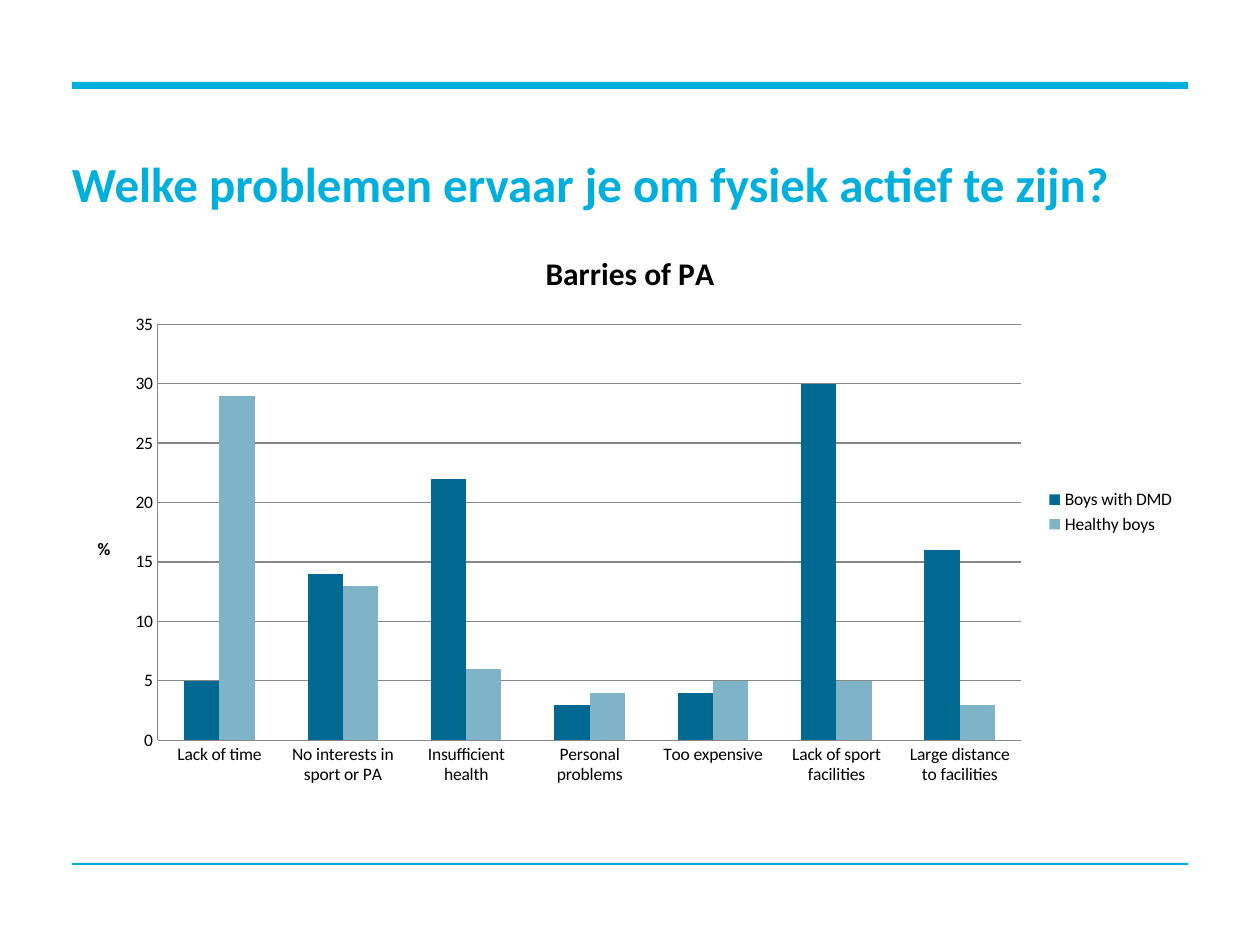
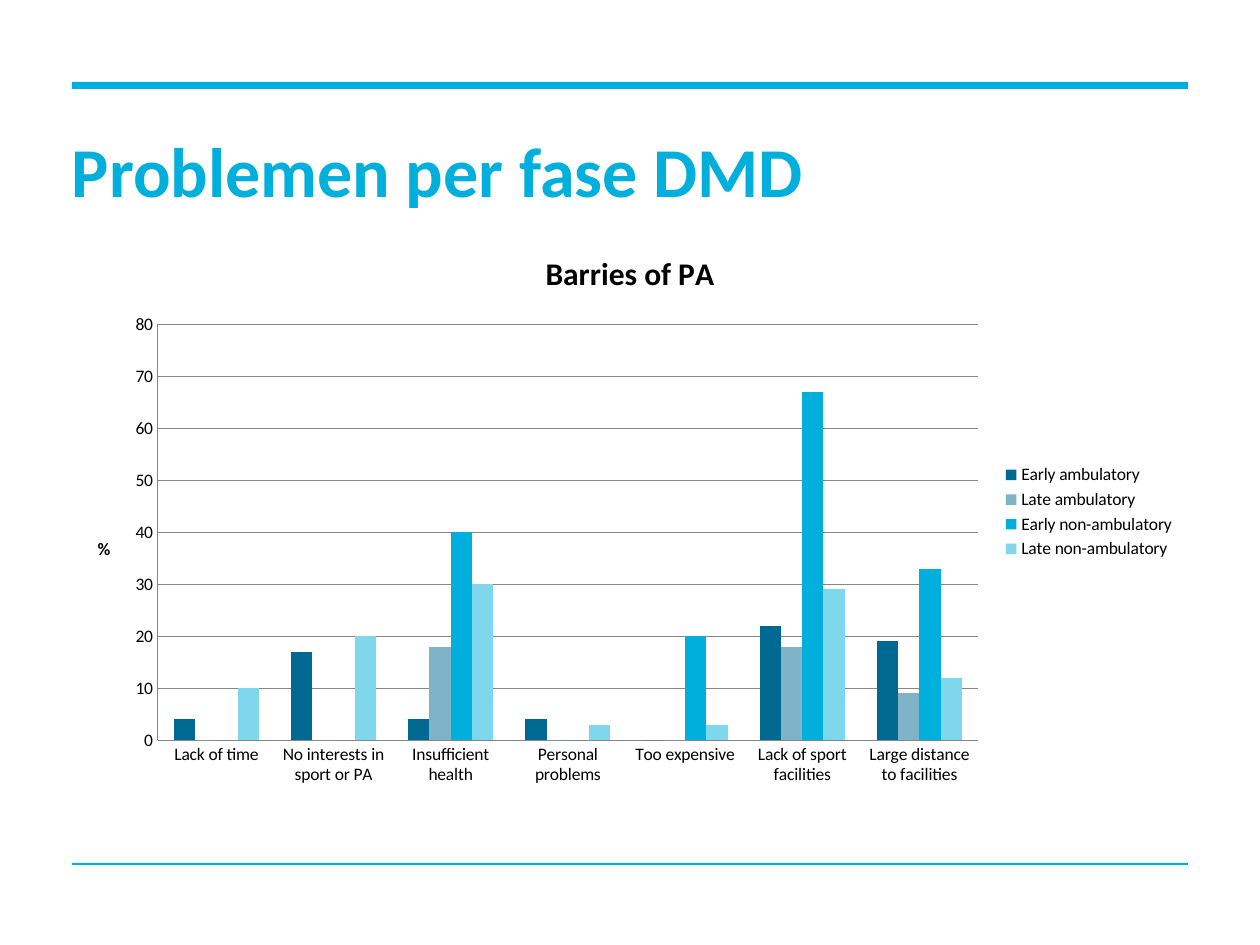
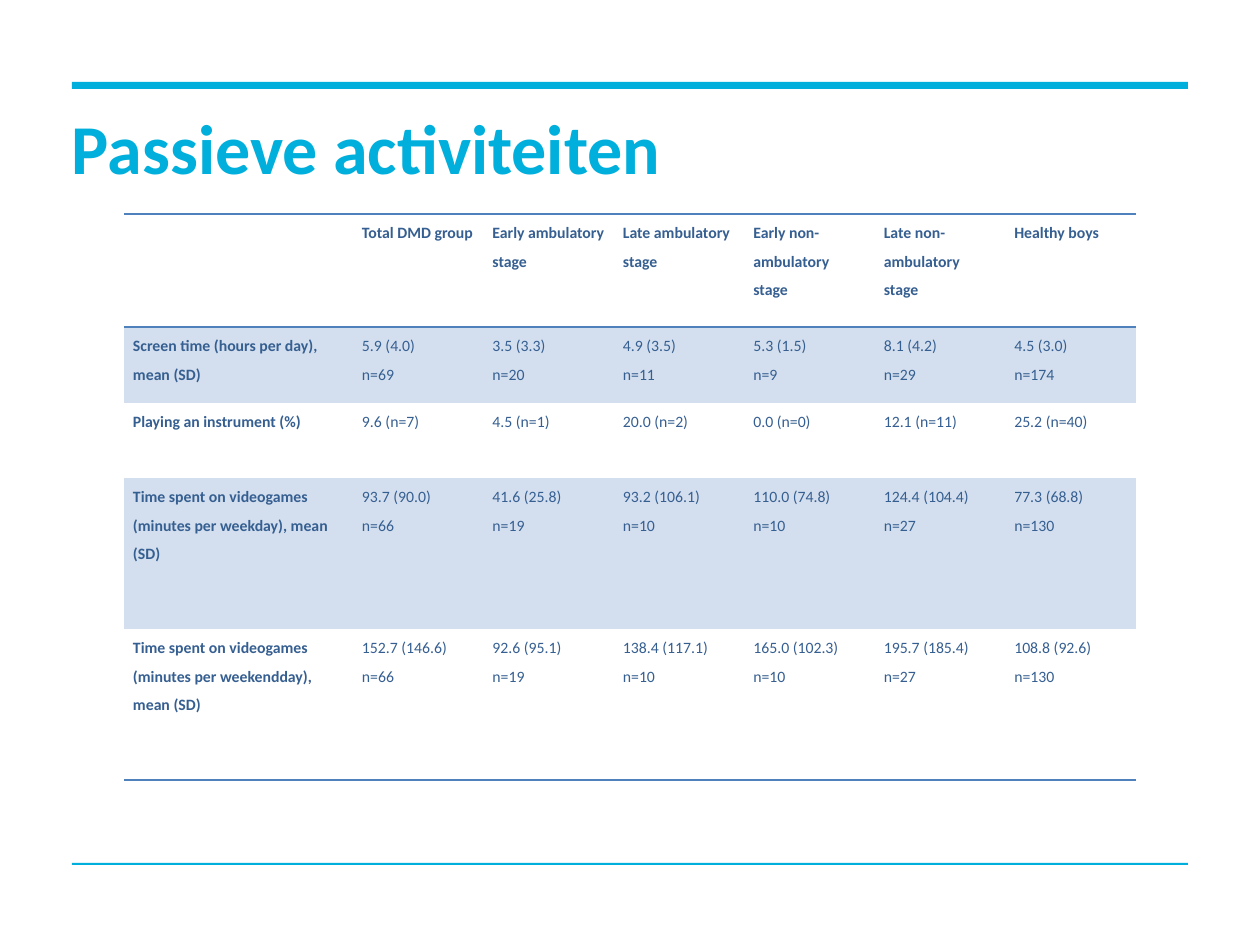
from lxml import etree
from pptx import Presentation
from pptx.chart.data import CategoryChartData
from pptx.dml.color import RGBColor
from pptx.enum.chart import XL_CHART_TYPE, XL_LEGEND_POSITION, XL_TICK_MARK
from pptx.enum.shapes import MSO_SHAPE
from pptx.enum.text import MSO_ANCHOR
from pptx.oxml.ns import qn
from pptx.util import Emu, Pt

COLUMNS = XL_CHART_TYPE.COLUMN_CLUSTERED
LEGEND_RIGHT = XL_LEGEND_POSITION.RIGHT
NO_TICK = XL_TICK_MARK.NONE
RECTANGLE = MSO_SHAPE.RECTANGLE
MIDDLE = MSO_ANCHOR.MIDDLE

FONT = "Calibri"
CYAN = "00AFDC"
BLACK = "000000"
GRID_GREY = "878787"
TABLE_TEXT = "365F91"
TABLE_RULE = "4F81BD"
TABLE_BAND = "D3DFEE"
SERIES_COLORS = ["006991", "7FB4C8", CYAN, "7FD7ED"]
NO_TABLE_STYLE = "{2D5ABB26-0587-4C30-8999-92F81FD0307C}"
LEFT, WIDTH = 72, 1116


def px(length):
    return Emu(round(length * 914400 / 126))


def rgb(value):
    return RGBColor.from_string(value)


barriers = ["Lack of time", "No interests in sport or PA", "Insufficient health",
            "Personal problems", "Too expensive", "Lack of sport facilities",
            "Large distance to facilities"]
boys_compared = {
    "Boys with DMD": [5, 14, 22, 3, 4, 30, 16],
    "Healthy boys": [29, 13, 6, 4, 5, 5, 3],
}
stages_compared = {
    "Early ambulatory": [4, 17, 4, 4, 0, 22, 19],
    "Late ambulatory": [0, 0, 18, 0, 0, 18, 9],
    "Early non-ambulatory": [0, 0, 40, 0, 20, 67, 33],
    "Late non-ambulatory": [10, 20, 30, 3, 3, 29, 12],
}
activities = [
    ["", "Total DMD group", "Early ambulatory stage", "Late ambulatory stage",
     "Early non-ambulatory stage", "Late non-ambulatory stage", "Healthy boys"],
    ["Screen time (hours per day), mean (SD)", "5.9 (4.0)\nn=69", "3.5 (3.3)\nn=20",
     "4.9 (3.5)\nn=11", "5.3 (1.5)\nn=9", "8.1 (4.2)\nn=29", "4.5 (3.0)\nn=174"],
    ["Playing an instrument (%)", "9.6 (n=7)", "4.5 (n=1)", "20.0 (n=2)",
     "0.0 (n=0)", "12.1 (n=11)", "25.2 (n=40)"],
    ["Time spent on videogames (minutes per weekday), mean (SD)",
     "93.7 (90.0)\nn=66", "41.6 (25.8)\nn=19", "93.2 (106.1)\nn=10",
     "110.0 (74.8)\nn=10", "124.4 (104.4)\nn=27", "77.3 (68.8)\nn=130"],
    ["Time spent on videogames (minutes per weekendday), mean (SD)",
     "152.7 (146.6)\nn=66", "92.6 (95.1)\nn=19", "138.4 (117.1)\nn=10",
     "165.0 (102.3)\nn=10", "195.7 (185.4)\nn=27", "108.8 (92.6)\nn=130"],
]
row_heights = [113, 76, 75, 151, 151]
ruled_edges = {0: ["a:lnT", "a:lnB"], 4: ["a:lnB"]}

pages = [
    ("Welke problemen ervaar je om fysiek actief te zijn?", 28, 139, boys_compared, 35, 5),
    ("Problemen per fase DMD", 40, 138, stages_compared, 80, 10),
    ("Passieve activiteiten", 40, 115, None, None, None),
]

prs = Presentation()
prs.slide_width, prs.slide_height = px(1260), px(945)

for heading, heading_size, heading_top, percentages, axis_max, axis_step in pages:
    slide = prs.slides.add_slide(prs.slide_layouts[6])

    for rule_top, rule_height in [(82, 7), (863, 2)]:
        rule = slide.shapes.add_shape(RECTANGLE, px(LEFT), px(rule_top), px(WIDTH), px(rule_height))
        rule.shadow.inherit = False
        rule.fill.solid()
        rule.fill.fore_color.rgb = rgb(CYAN)
        rule.line.fill.background()

    title = slide.shapes.add_textbox(px(LEFT), px(heading_top), px(WIDTH), px(73)).text_frame
    title.word_wrap = True
    title.vertical_anchor = MIDDLE
    title.margin_left = title.margin_right = title.margin_top = title.margin_bottom = 0
    title.text = heading
    title.paragraphs[0].line_spacing = Pt(42)
    title_font = title.paragraphs[0].runs[0].font
    title_font.name, title_font.size, title_font.bold = FONT, Pt(heading_size), True
    title_font.color.rgb = rgb(CYAN)

    if percentages:
        barrier_data = CategoryChartData()
        barrier_data.categories = barriers
        for group, values in percentages.items():
            barrier_data.add_series(group, values)
        chart = slide.shapes.add_chart(
            COLUMNS, px(LEFT), px(228), px(WIDTH), px(568), barrier_data).chart
        chart.font.name, chart.font.size = FONT, Pt(10)
        chart.font.color.rgb = rgb(BLACK)
        chart.has_legend = True
        chart.legend.position = LEGEND_RIGHT
        chart.legend.include_in_layout = False

        plot = chart.plots[0]
        plot.gap_width, plot.overlap = 150, 0
        plot.vary_by_categories = False
        for series, color in zip(plot.series, SERIES_COLORS):
            series.format.fill.solid()
            series.format.fill.fore_color.rgb = rgb(color)

        percent_axis = chart.value_axis
        percent_axis.minimum_scale, percent_axis.maximum_scale = 0, axis_max
        percent_axis.major_unit = axis_step
        percent_axis.has_major_gridlines = True
        for axis in [chart.category_axis, percent_axis]:
            axis.major_tick_mark = axis.minor_tick_mark = NO_TICK
        for axis_part in [chart.category_axis, percent_axis, percent_axis.major_gridlines]:
            axis_part.format.line.color.rgb = rgb(GRID_GREY)
            axis_part.format.line.width = Pt(0.75)

        chart.has_title = True
        for caption, wording, size in [(chart.chart_title, "Barries of PA", 18),
                                       (percent_axis.axis_title, "%", 10)]:
            caption.text_frame.text = wording
            caption_font = caption.text_frame.paragraphs[0].runs[0].font
            caption_font.name, caption_font.size, caption_font.bold = FONT, Pt(size), True
            caption_font.color.rgb = rgb(BLACK)
        upright = percent_axis.axis_title.element.find(".//" + qn("a:bodyPr"))
        upright.set("rot", "0")
        upright.set("vert", "horz")
    else:
        frame = slide.shapes.add_table(
            len(activities), len(activities[0]), px(124), px(214), px(1012), px(sum(row_heights)))
        frame.element.find(".//" + qn("a:tableStyleId")).text = NO_TABLE_STYLE
        table = frame.table
        table.first_row = table.horz_banding = False
        for c, column in enumerate(table.columns):
            column.width = px(229) if c == 0 else px(783) // 6
        for r, (row_texts, height) in enumerate(zip(activities, row_heights)):
            table.rows[r].height = px(height)
            for c, text in enumerate(row_texts):
                cell = table.cell(r, c)
                cell.margin_left = cell.margin_right = px(9)
                cell.margin_top = cell.margin_bottom = 0
                for edge in ruled_edges.get(r, []):
                    border = etree.SubElement(cell._tc.get_or_add_tcPr(), qn(edge), w="12700")
                    border_fill = etree.SubElement(border, qn("a:solidFill"))
                    etree.SubElement(border_fill, qn("a:srgbClr"), val=TABLE_RULE)
                if r % 2:
                    cell.fill.solid()
                    cell.fill.fore_color.rgb = rgb(TABLE_BAND)
                else:
                    cell.fill.background()
                cell.text_frame.text = text
                for paragraph in cell.text_frame.paragraphs:
                    paragraph.line_spacing = 1.5
                    for run in paragraph.runs:
                        run.font.name, run.font.size = FONT, Pt(9)
                        run.font.bold = r == 0 or c == 0
                        run.font.color.rgb = rgb(TABLE_TEXT)

prs.save("out.pptx")
